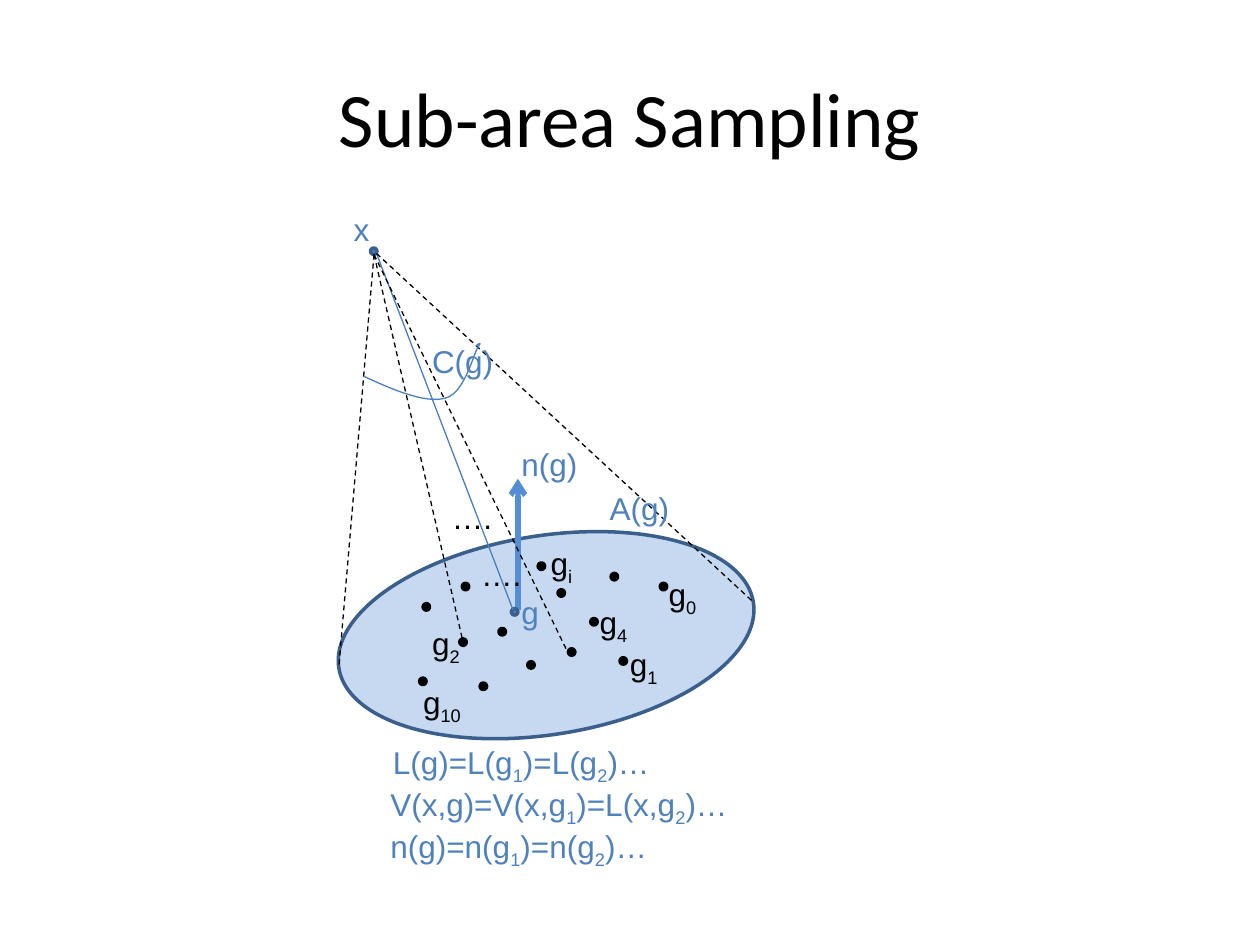
from dataclasses import dataclass

from lxml.etree import SubElement
from pptx import Presentation
from pptx.dml.color import RGBColor
from pptx.enum.dml import MSO_LINE
from pptx.enum.shapes import MSO_CONNECTOR, MSO_SHAPE
from pptx.enum.text import MSO_ANCHOR, MSO_AUTO_SIZE, PP_ALIGN
from pptx.oxml.ns import qn
from pptx.slide import Slide
from pptx.util import Cm, Pt

BLACK = RGBColor(0x00, 0x00, 0x00)
BLUE = RGBColor(0x4F, 0x81, 0xBD)
DARK_BLUE = RGBColor(0x3A, 0x5F, 0x8C)
LINE_BLUE = RGBColor(0x4B, 0x7E, 0xBC)
ARROW_BLUE = RGBColor(0x55, 0x8E, 0xD5)
PALE_BLUE = RGBColor(0xC6, 0xD9, 0xF1)
DOT_SIZE = 0.13
LABEL_HEIGHT = 1.02


@dataclass
class Label:
    """A text at a place in centimetres; every second part between _ is a subscript."""
    text: str
    left: float
    top: float
    width: float
    color: RGBColor = BLUE
    height: float = LABEL_HEIGHT
    size: int = 18
    font: str = "Arial"


@dataclass
class Ray:
    start: tuple[float, float]
    end: tuple[float, float]
    color: RGBColor = BLACK
    width: float = 0.75
    dashed: bool = True
    arrow: bool = False


TITLE = Label("Sub-area Sampling", 1.27, 0.76, 22.86, BLACK, 3.18, 44, "Calibri")
NORMAL = Ray((10.44, 12.29), (10.44, 9.65), ARROW_BLUE, 3, dashed=False, arrow=True)
SAMPLE_POINTS = [
    (9.27, 12.88), (9.32, 11.76), (10.64, 13.34), (9.68, 13.77), (8.46, 13.67),
    (10.06, 12.67), (10.85, 11.35), (11.25, 11.89), (11.91, 12.47), (12.32, 11.56),
    (11.46, 13.08), (8.53, 12.17), (13.31, 11.76), (12.5, 13.26),
]
CENTER_POINTS = [(10.31, 12.27), (7.47, 5.0)]
RAYS = [
    Ray((7.59, 5.11), (10.34, 12.29), LINE_BLUE, dashed=False),
    Ray((7.59, 5.11), (15.19, 12.14)),
    Ray((7.54, 5.13), (9.32, 12.88)),
    Ray((7.54, 5.13), (6.83, 13.46)),
    Ray((7.54, 5.13), (11.46, 13.18)),
]
LABELS = [
    Label("g", 10.26, 11.84, 0.99),
    Label("g_0", 13.23, 11.46, 1.4, BLACK),
    Label("g_i", 10.85, 10.85, 1.4, BLACK),
    Label("g_1", 12.45, 12.88, 1.4, BLACK),
    Label("g_4", 11.84, 12.04, 1.4, BLACK),
    Label("g_2", 8.46, 12.45, 1.4, BLACK),
    Label("g_10", 8.28, 13.64, 1.4, BLACK),
    Label("….", 9.45, 11.07, 1.4, BLACK),
    Label("….", 8.86, 9.91, 1.4, BLACK),
    Label("x", 6.88, 4.11, 0.99),
    Label("A(g)", 12.04, 9.73, 1.98),
    Label("n(g)", 10.26, 8.84, 1.98),
    Label("C(g)", 8.46, 6.78, 1.98),
    Label("L(g)=L(g_1_)=L(g_2_)…", 7.67, 14.86, 7.14),
    Label("V(x,g)=V(x,g_1_)=L(x,g_2_)…", 7.62, 15.7, 9.53),
    Label("n(g)=n(g_1_)=n(g_2_)…", 7.62, 16.54, 9.53),
]
# Bezier points of the cone's arc; neighbouring segments share an end
ARC = [
    (7.34, 7.59), (7.95, 7.87), (8.56, 8.13), (8.97, 8.03), (9.35, 7.95),
    (9.53, 7.19), (9.63, 7.01), (9.75, 6.83), (9.6, 6.99), (9.6, 6.96),
]


def add_ellipse(slide: Slide, left: float, top: float, width: float, height: float,
                fill: RGBColor, line: RGBColor, rotation: float = 0) -> None:
    shape = slide.shapes.add_shape(MSO_SHAPE.OVAL, Cm(left), Cm(top), Cm(width), Cm(height))
    shape.rotation = rotation
    shape.shadow.inherit = False
    shape.fill.solid()
    shape.fill.fore_color.rgb = fill
    shape.line.color.rgb = line
    shape.line.width = Pt(2)


def add_label(slide: Slide, label: Label, centered: bool = False) -> None:
    box = slide.shapes.add_textbox(
        Cm(label.left), Cm(label.top), Cm(label.width), Cm(label.height))
    frame = box.text_frame
    frame.word_wrap = True
    paragraph = frame.paragraphs[0]
    if centered:
        frame.vertical_anchor = MSO_ANCHOR.MIDDLE
        paragraph.alignment = PP_ALIGN.CENTER
    else:
        frame.auto_size = MSO_AUTO_SIZE.SHAPE_TO_FIT_TEXT
    paragraph.font.name = label.font
    paragraph.font.size = Pt(label.size)
    paragraph.font.color.rgb = label.color
    for index, part in enumerate(label.text.split("_")):
        run = paragraph.add_run()
        run.text = part
        if index % 2:
            run.font._element.set("baseline", "-25000")


def add_ray(slide: Slide, ray: Ray) -> None:
    connector = slide.shapes.add_connector(
        MSO_CONNECTOR.STRAIGHT, *(Cm(value) for value in ray.start + ray.end))
    connector.line.color.rgb = ray.color
    connector.line.width = Pt(ray.width)
    if ray.dashed:
        connector.line.dash_style = MSO_LINE.DASH
    if ray.arrow:
        SubElement(connector.line._get_or_add_ln(), qn("a:tailEnd"), type="arrow")
    SubElement(connector._element.spPr, qn("a:effectLst"))


def bezier_point(controls: list[tuple[float, float]], t: float) -> tuple[int, int]:
    weights = ((1 - t) ** 3, 3 * t * (1 - t) ** 2, 3 * t ** 2 * (1 - t), t ** 3)
    x, y = (sum(w * point[axis] for w, point in zip(weights, controls)) for axis in (0, 1))
    return Cm(x), Cm(y)


def add_arc(slide: Slide, steps: int = 12) -> None:
    points = [bezier_point(ARC[first:first + 4], step / steps)
              for first in range(0, len(ARC) - 1, 3) for step in range(1, steps + 1)]
    builder = slide.shapes.build_freeform(Cm(ARC[0][0]), Cm(ARC[0][1]))
    builder.add_line_segments(points, close=False)
    shape = builder.convert_to_shape()
    shape.shadow.inherit = False
    shape.fill.background()
    shape.line.color.rgb = LINE_BLUE
    shape.line.width = Pt(0.75)


def main() -> None:
    presentation = Presentation()
    presentation.slide_width = Cm(25.4)
    presentation.slide_height = Cm(19.05)
    slide = presentation.slides.add_slide(presentation.slide_layouts[6])

    # Sampled area with its normal
    add_ellipse(slide, 6.78, 10.8, 8.46, 4.01, PALE_BLUE, DARK_BLUE, rotation=351)
    add_label(slide, TITLE, centered=True)
    add_ray(slide, NORMAL)

    # Points
    for left, top in SAMPLE_POINTS:
        add_ellipse(slide, left, top, DOT_SIZE, DOT_SIZE, BLACK, BLACK)
    for left, top in CENTER_POINTS:
        add_ellipse(slide, left, top, DOT_SIZE, DOT_SIZE, BLUE, DARK_BLUE)

    # Cone from x to the area
    for ray in RAYS:
        add_ray(slide, ray)
    add_arc(slide)

    # Labels and equations
    for label in LABELS:
        add_label(slide, label)

    presentation.save("out.pptx")


if __name__ == "__main__":
    main()
